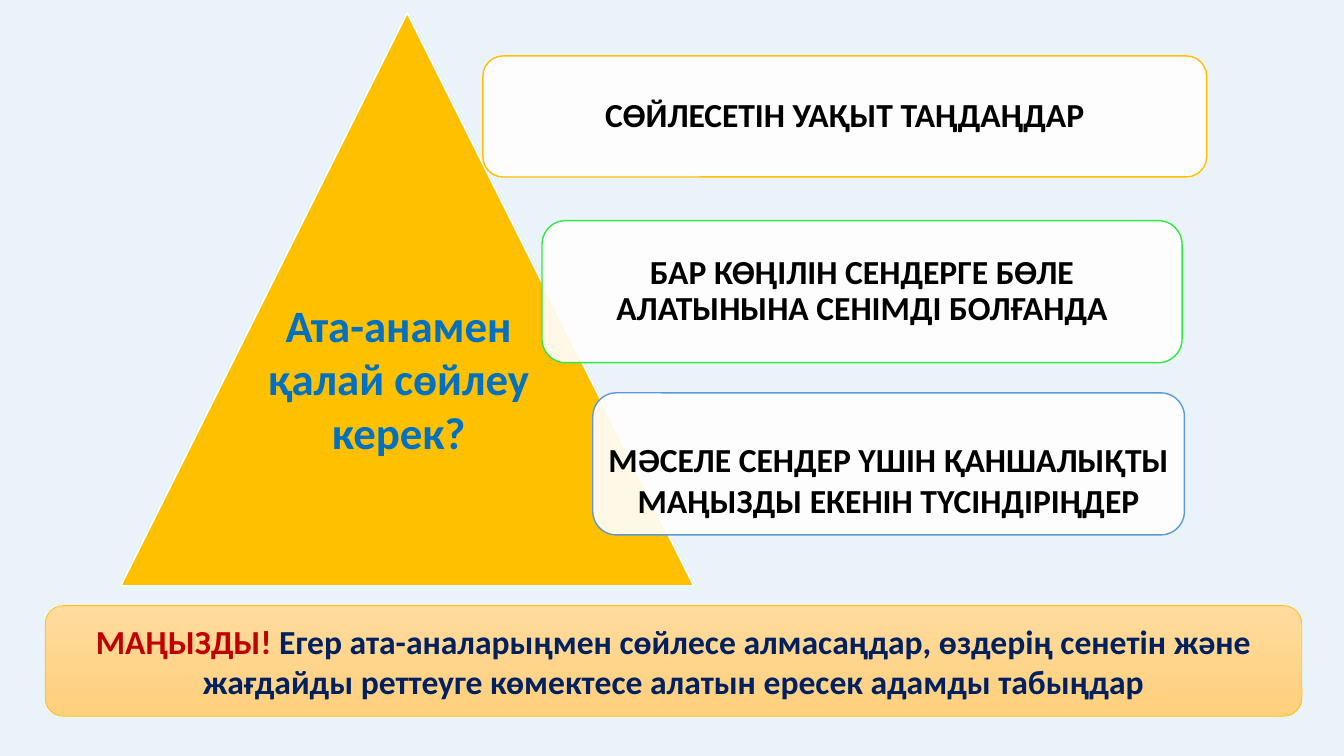
from dataclasses import dataclass

from lxml import etree
from pptx import Presentation
from pptx import util as u
from pptx.dml.color import RGBColor
from pptx.enum import shapes, text
from pptx.oxml import ns


@dataclass(frozen=True)
class Theme:
    font: str = "Calibri"
    background: str = "EBF3FA"
    gold: str = "FFC000"
    green: str = "30E845"
    blue: str = "5B9BD5"
    white: str = "FFFFFF"
    black: str = "000000"
    title: str = "0070C0"
    warning: str = "C00000"
    navy: str = "002060"
    note_top: str = "FFDB9E"
    note_bottom: str = "FFD07C"
    title_size: int = 32
    body_size: int = 24


THEME = Theme()


def rgb(color):
    return RGBColor.from_string(color)


def add_panel(slide, kind, box, line_color, line_width=1):
    sp = slide.shapes.add_shape(kind, *map(u.Cm, box))
    sp.shadow.inherit = False
    sp.line.color.rgb = rgb(line_color)
    sp.line.width = u.Pt(line_width)
    return sp


def fill_solid(sp, color, opacity=100):
    sp.fill.solid()
    sp.fill.fore_color.rgb = rgb(color)
    if opacity < 100:
        color_el = sp.element.spPr.find(ns.qn("a:solidFill"))[0]
        etree.SubElement(color_el, ns.qn("a:alpha"), val=str(opacity * 1000))


def write_text(sp, runs, size, spacing=1.0):
    """Fill a shape with one centred paragraph of (words, colour) runs."""
    tf = sp.text_frame
    tf.word_wrap = True
    tf.auto_size = text.MSO_AUTO_SIZE.NONE
    tf.vertical_anchor = text.MSO_ANCHOR.MIDDLE
    p = tf.paragraphs[0]
    p.alignment = text.PP_ALIGN.CENTER
    p.line_spacing = spacing
    for words, color in runs:
        r = p.add_run()
        r.text = words
        r.font.name = THEME.font
        r.font.size = u.Pt(size)
        r.font.bold = True
        r.font.color.rgb = rgb(color)


def add_triangle(slide):
    sp = add_panel(slide, shapes.MSO_SHAPE.ISOSCELES_TRIANGLE,
                   (3.05, 0.33, 14.43, 14.43), THEME.white)
    fill_solid(sp, THEME.gold)


def add_step(slide, words, box, line_color, inset, top_inset, spacing):
    sp = add_panel(slide, shapes.MSO_SHAPE.ROUNDED_RECTANGLE, box, line_color)
    fill_solid(sp, THEME.white, opacity=90)
    write_text(sp, [(words, THEME.black)], THEME.body_size, spacing)
    tf = sp.text_frame
    tf.margin_left = tf.margin_right = tf.margin_bottom = u.Cm(inset)
    tf.margin_top = u.Cm(top_inset)


def place_title(slide, words, box):
    """Move the title placeholder into the triangle, in front of it."""
    title = slide.shapes.title
    title.left, title.top, title.width, title.height = map(u.Cm, box)
    write_text(title, [(words, THEME.title)], THEME.title_size)
    title.element.getparent().append(title.element)


def add_note(slide, runs, box):
    sp = add_panel(slide, shapes.MSO_SHAPE.ROUNDED_RECTANGLE, box, THEME.gold, 0.5)
    sp.fill.gradient()
    sp.fill.gradient_angle = 270
    for stop, color, position in zip(sp.fill.gradient_stops,
                                     (THEME.note_top, THEME.note_bottom), (0, 1)):
        stop.color.rgb = rgb(color)
        stop.position = position
    write_text(sp, runs, THEME.body_size)


def main():
    prs = Presentation()
    prs.slide_width, prs.slide_height = u.Cm(33.87), u.Cm(19.05)
    slide = prs.slides.add_slide(prs.slide_layouts[5])
    slide.background.fill.solid()
    slide.background.fill.fore_color.rgb = rgb(THEME.background)

    add_triangle(slide)
    steps = [
        ("СӨЙЛЕСЕТІН УАҚЫТ ТАҢДАҢДАР",
         (12.17, 1.41, 18.24, 3.05), THEME.gold, 0.25, 0.25, 0.9),
        ("БАР КӨҢІЛІН СЕНДЕРГЕ БӨЛЕ АЛАТЫНЫНА СЕНІМДІ БОЛҒАНДА",
         (13.66, 5.56, 16.13, 3.58), THEME.green, 0.25, 0.25, 0.9),
        ("МӘСЕЛЕ СЕНДЕР ҮШІН ҚАНШАЛЫҚТЫ МАҢЫЗДЫ ЕКЕНІН ТҮСІНДІРІҢДЕР",
         (14.94, 9.9, 14.91, 3.58), THEME.blue, 0.15, 0.94, 1.0),
    ]
    for step in steps:
        add_step(slide, *step)
    place_title(slide, "Ата-анамен қалай сөйлеу керек?", (6.43, 7.34, 7.24, 4.37))
    add_note(slide, [
        ("МАҢЫЗДЫ! ", THEME.warning),
        ("Егер ата-аналарыңмен сөйлесе алмасаңдар, өздерің сенетін және "
         "жағдайды реттеуге көмектесе алатын ересек адамды табыңдар", THEME.navy),
    ], (1.14, 15.26, 31.67, 2.79))
    prs.save("out.pptx")


if __name__ == "__main__":
    main()
